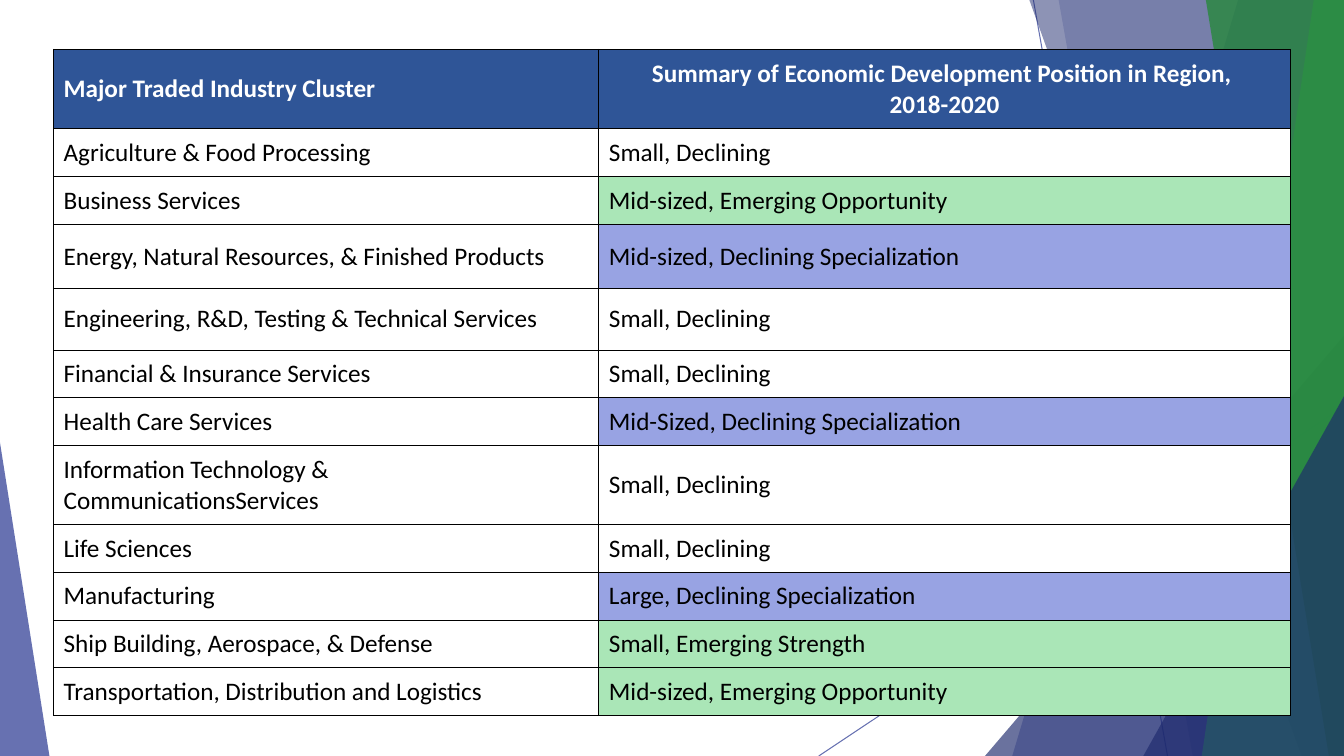
from dataclasses import dataclass

from lxml.etree import SubElement
from pptx import Presentation
from pptx.dml.color import RGBColor
from pptx.enum.shapes import MSO_CONNECTOR, MSO_SHAPE
from pptx.enum.text import MSO_ANCHOR, PP_ALIGN
from pptx.oxml.ns import qn
from pptx.util import Emu, Inches, Pt

WIDE, HIGH = Inches(13.33), Inches(7.5)


@dataclass(frozen=True)
class Theme:
    """Colours, font and sizes used on the slide."""
    navy: str = "273691"
    dark: str = "1D296D"
    lime: str = "35B651"
    green: str = "28883D"
    head: str = "2F5597"
    white: str = "FFFFFF"
    black: str = "000000"
    mint: str = "AAE6B7"
    lilac: str = "98A3E3"
    font: str = "Calibri"
    size: float = 18
    rule: float = 0.75


@dataclass(frozen=True)
class Ray:
    """A thin line between two points, in percent of the slide."""
    start: tuple[float, float]
    end: tuple[float, float]


@dataclass(frozen=True)
class Shard:
    """A full-height band from a slanted left edge to the right edge."""
    top: float
    base: float
    color: str
    alpha: int


@dataclass(frozen=True)
class Wedge:
    """A right triangle on the slide's foot; tip is 0 for left, 1 for right."""
    left: float
    top: float
    width: float
    tip: int
    color: str
    alpha: int


@dataclass(frozen=True)
class Row:
    """One cluster with its standing and row height in percent."""
    name: str
    state: str
    height: float = 6.3


THEME = Theme()
TALL = 10.53
COLS = (40.58, 51.46)
RAYS = [Ray((76.89, 0), (86.87, 100)), Ray((100, 53.73), (60.92, 100))]
DECOR = [
    Shard(92.12, 75.32, THEME.navy, 36),
    Shard(78.77, 88.75, THEME.navy, 20),
    Wedge(73.29, 44.4, 26.71, 1, THEME.dark, 66),
    Shard(76.59, 96.85, THEME.dark, 50),
    Shard(97.75, 89.42, THEME.lime, 70),
    Shard(89.72, 98.87, THEME.green, 80),
    Wedge(85.07, 52.4, 14.93, 1, THEME.dark, 66),
    Wedge(0, 58.53, 3.68, 0, THEME.navy, 70),
]
TITLES = ("Major Traded Industry Cluster",
          "Summary of Economic Development Position in Region, \n2018-2020")
ROWS = [
    Row("Agriculture & Food Processing", "Small, Declining"),
    Row("Business Services", "Mid-sized, Emerging Opportunity"),
    Row("Energy, Natural Resources, & Finished Products",
        "Mid-sized, Declining Specialization", 8.53),
    Row("Engineering, R&D, Testing & Technical Services",
        "Small, Declining", 8.13),
    Row("Financial & Insurance Services", "Small, Declining"),
    Row("Health Care Services", "Mid-Sized, Declining Specialization"),
    Row("Information Technology & CommunicationsServices",
        "Small, Declining", TALL),
    Row("Life Sciences", "Small, Declining"),
    Row("Manufacturing", "Large, Declining Specialization"),
    Row("Ship Building, Aerospace, & Defense", "Small, Emerging Strength"),
    Row("Transportation, Distribution and Logistics",
        "Mid-sized, Emerging Opportunity"),
]


def across(share: float) -> Emu:
    """Turn a percent of the width into a length."""
    return Emu(round(WIDE * share / 100))


def down(share: float) -> Emu:
    """Turn a percent of the height into a length."""
    return Emu(round(HIGH * share / 100))


def paint(fill, color: str) -> None:
    """Give a fill one solid colour."""
    fill.solid()
    fill.fore_color.rgb = RGBColor.from_string(color)


def fade(shape, alpha: int) -> None:
    """Set the opacity of a shape's own colours."""
    for color in shape.element.spPr.iter(qn("a:srgbClr")):
        SubElement(color, qn("a:alpha"), val=str(alpha * 1000))


def draw_ray(slide, ray: Ray) -> None:
    """Draw one thin line."""
    (left, top), (right, foot) = ray.start, ray.end
    line = slide.shapes.add_connector(
        MSO_CONNECTOR.STRAIGHT,
        across(left), down(top), across(right), down(foot))
    paint(line.line.fill, THEME.navy)
    line.line.width = Pt(THEME.rule)
    fade(line, 70)
    SubElement(line.element.spPr, qn("a:effectLst"))


def draw_decor(slide, part: Shard | Wedge) -> None:
    """Draw one see-through band or triangle."""
    if isinstance(part, Shard):
        pen = slide.shapes.build_freeform(across(part.top), 0)
        pen.add_line_segments(
            [(WIDE, 0), (WIDE, HIGH), (across(part.base), HIGH)])
        shape = pen.convert_to_shape()
    else:
        shape = slide.shapes.add_shape(
            MSO_SHAPE.ISOSCELES_TRIANGLE, across(part.left), down(part.top),
            across(part.width), down(100 - part.top))
        shape.adjustments[0] = part.tip
    shape.shadow.inherit = False
    shape.line.fill.background()
    paint(shape.fill, part.color)
    fade(shape, part.alpha)


def tone(text: str) -> str:
    """Choose the cell colour that fits a standing."""
    if "Emerging" in text:
        return THEME.mint
    return THEME.lilac if "Specialization" in text else THEME.white


def write_cell(cell, text: str, fill: str, head: bool, align) -> None:
    """Fill one table cell with text, colour and borders."""
    for side in ("lnL", "lnR", "lnT", "lnB"):
        edge = SubElement(cell._tc.get_or_add_tcPr(), qn(f"a:{side}"),
                          w=str(Pt(THEME.rule)))
        solid = SubElement(edge, qn("a:solidFill"))
        SubElement(solid, qn("a:srgbClr"), val=THEME.black)
    paint(cell.fill, fill)
    cell.vertical_anchor = MSO_ANCHOR.MIDDLE
    frame = cell.text_frame
    for spot, words in enumerate(text.split("\n")):
        para = frame.add_paragraph() if spot else frame.paragraphs[0]
        para.alignment = align
        run = para.add_run()
        run.text = words
        run.font.name = THEME.font
        run.font.size = Pt(THEME.size)
        run.font.bold = head
        run.font.color.rgb = RGBColor.from_string(
            THEME.white if head else THEME.black)


def draw_table(slide) -> None:
    """Draw the table of clusters."""
    rows = [Row(*TITLES, TALL), *ROWS]
    table = slide.shapes.add_table(
        len(rows), len(COLS), across(3.98), down(6.53), across(sum(COLS)),
        down(sum(row.height for row in rows))).table
    for col, share in zip(table.columns, COLS):
        col.width = across(share)
    for spot, row in enumerate(rows):
        head = spot == 0
        table.rows[spot].height = down(row.height)
        write_cell(table.cell(spot, 0), row.name,
                   THEME.head if head else THEME.white, head, PP_ALIGN.LEFT)
        write_cell(table.cell(spot, 1), row.state,
                   THEME.head if head else tone(row.state), head,
                   PP_ALIGN.CENTER if head else PP_ALIGN.LEFT)


def main() -> None:
    """Build the slide and save it."""
    deck = Presentation()
    deck.slide_width, deck.slide_height = WIDE, HIGH
    slide = deck.slides.add_slide(deck.slide_layouts[6])
    paint(slide.background.fill, THEME.white)
    for ray in RAYS:
        draw_ray(slide, ray)
    for part in DECOR:
        draw_decor(slide, part)
    draw_table(slide)
    deck.save("out.pptx")


if __name__ == "__main__":
    main()
